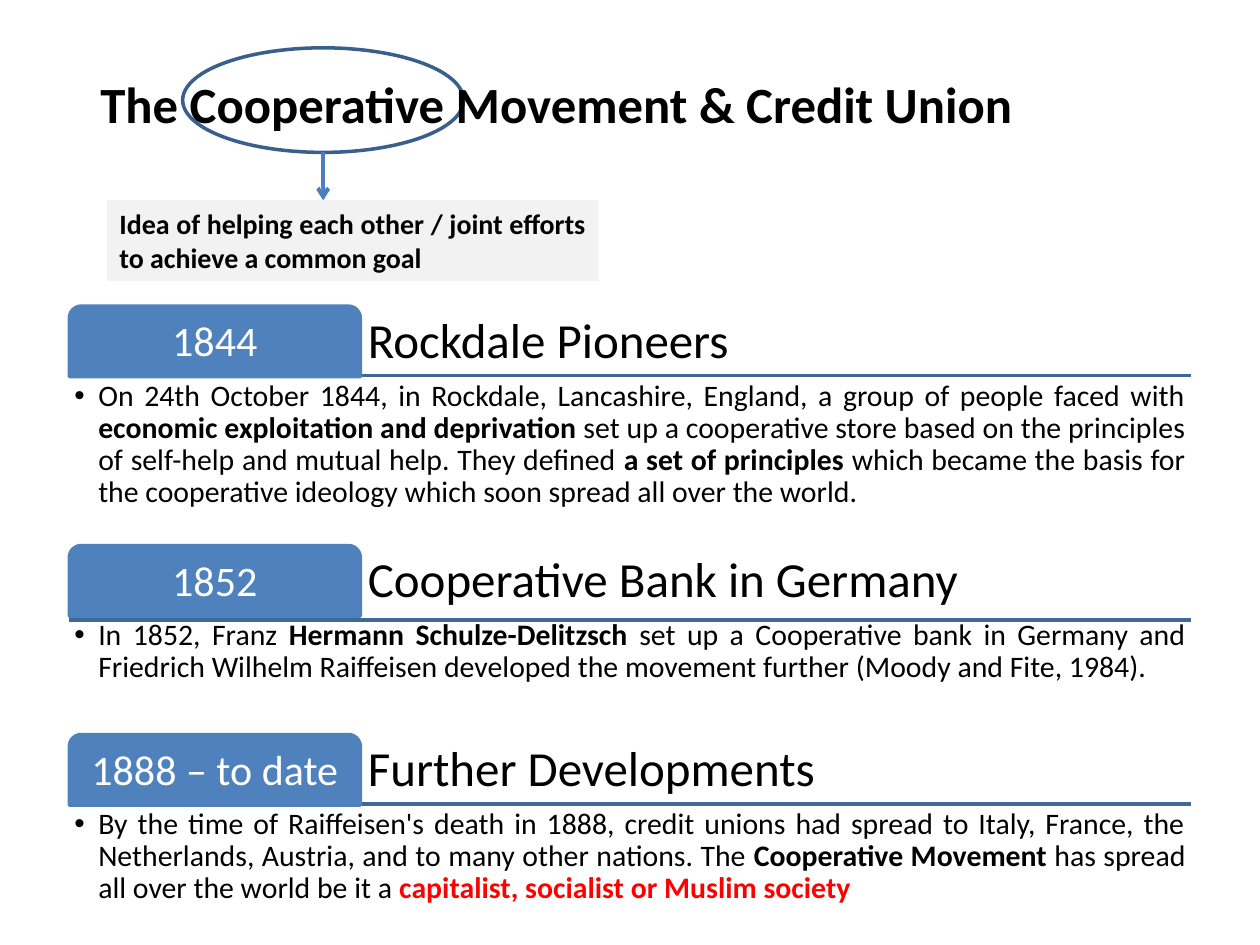
from lxml import etree
from pptx import Presentation
from pptx.dml.color import RGBColor
from pptx.enum.shapes import MSO_CONNECTOR as Connector, MSO_SHAPE as Shape
from pptx.enum.text import MSO_ANCHOR as Anchor, PP_ALIGN as Align
from pptx.oxml.ns import qn
from pptx.util import Inches, Pt

BLUE, RULE, BLACK, WHITE, RED = "4F81BD", "3F6797", "000000", "FFFFFF", "FF0000"

SECTIONS = [
    (2.43, 2.98, "1844", "Rockdale Pioneers", [
        ("On 24th October 1844, in Rockdale, Lancashire, England, a group of people faced with ", False, BLACK),
        ("economic exploitation and deprivation ", True, BLACK),
        ("set up a cooperative store based on the principles of self-help and mutual help. They defined ", False, BLACK),
        ("a set of principles ", True, BLACK),
        ("which became the basis for the cooperative ideology which soon spread all over the world.", False, BLACK)]),
    (4.33, 4.92, "1852", "Cooperative Bank in Germany", [
        ("In 1852, Franz ", False, BLACK),
        ("Hermann Schulze-Delitzsch ", True, BLACK),
        ("set up a Cooperative bank in Germany and Friedrich Wilhelm Raiffeisen developed "
         "the movement further (Moody and Fite, 1984). ", False, BLACK)]),
    (5.83, 6.38, "1888 – to date", "Further Developments", [
        ("By the time of Raiffeisen's death in 1888, credit unions had spread to Italy, France, "
         "the Netherlands, Austria, and to many other nations. The ", False, BLACK),
        ("Cooperative Movement ", True, BLACK),
        ("has spread all over the world be it a ", False, BLACK),
        ("capitalist, socialist or Muslim society ", True, RED)]),
]


def color(value):
    """Turn a hex string into a colour."""
    return RGBColor.from_string(value)


def add_block(page, kind, box, fill, line=None):
    """Add a flat preset shape."""
    block = page.shapes.add_shape(kind, *map(Inches, box))
    block.shadow.inherit = False
    block.fill.solid()
    block.fill.fore_color.rgb = color(fill)
    if line:
        block.line.color.rgb = color(line)
        block.line.width = Pt(2)
    else:
        block.line.fill.background()
    return block


def add_line(page, start, end, line, width):
    """Add a straight connector without a shadow."""
    rule = page.shapes.add_connector(Connector.STRAIGHT, *map(Inches, start + end))
    rule.line.color.rgb = color(line)
    rule.line.width = Pt(width)
    etree.SubElement(rule._element.spPr, qn("a:effectLst"))
    return rule


def add_text_box(page, box):
    """Add an empty text box."""
    return page.shapes.add_textbox(*map(Inches, box))


def write(shape, spans, size, align, anchor, inset=None, spacing=None):
    """Fill a shape with one paragraph of styled spans and return it."""
    frame = shape.text_frame
    frame.word_wrap = True
    frame.vertical_anchor = anchor
    if inset is not None:
        frame.margin_left = frame.margin_right = Inches(inset)
        frame.margin_top = frame.margin_bottom = Inches(inset)
    para = frame.paragraphs[0]
    para.alignment = align
    if spacing:
        para.line_spacing = spacing
    for text, bold, ink in spans:
        span = para.add_run()
        span.text = text
        span.font.name = "Calibri"
        span.font.size = Pt(size)
        span.font.bold = bold
        span.font.color.rgb = color(ink)
    return para


def add_bullet(para, indent):
    """Give a paragraph a hanging round bullet."""
    props = para._p.get_or_add_pPr()
    props.set("marL", str(Inches(indent)))
    props.set("indent", str(-Inches(indent)))
    etree.SubElement(props, qn("a:buFont")).set("typeface", "Arial")
    etree.SubElement(props, qn("a:buChar")).set("char", "•")


def add_header(page, left, top):
    """Add the title, the ringed word and the note it points to."""
    ring_left, ring_top, ring_width, ring_height = left + 1.28, top + 0.16, 2.23, 0.83
    middle, bottom, note_top = ring_left + ring_width / 2, ring_top + ring_height, top + 1.37
    add_block(page, Shape.OVAL, (ring_left, ring_top, ring_width, ring_height), WHITE, "3A5F8C")
    title = add_text_box(page, (left, top, 8.5, 1.2))
    write(title, [("The Cooperative Movement & Credit Union", True, BLACK)], 29, Align.CENTER, Anchor.MIDDLE)
    arrow = add_line(page, (middle, bottom), (middle, note_top), "4B7EBC", 2.25)
    etree.SubElement(arrow.line._get_or_add_ln(), qn("a:tailEnd")).set("type", "arrow")
    note = add_block(page, Shape.RECTANGLE, (left + 0.68, note_top, 3.9, 0.64), "F2F2F2")
    write(note, [("Idea of helping each other / joint efforts to achieve a common goal", True, BLACK)],
          16, Align.JUSTIFY, Anchor.TOP)


def add_section(page, left, top, width, rule_top, year, heading, spans):
    """Add a dated tab with its heading, rule and bullet text."""
    tab_width, tab_height = 2.31, 0.56
    add_line(page, (left, rule_top), (left + width, rule_top), RULE, 2)
    box = add_text_box(page, (left + tab_width, top, width - tab_width, tab_height))
    write(box, [(heading, False, BLACK)], 28, Align.LEFT, Anchor.BOTTOM, 0.06, 0.9)
    tab = add_block(page, Shape.ROUND_2_SAME_RECTANGLE, (left, top, tab_width, tab_height), BLUE, BLUE)
    tab.adjustments[0] = 0.17
    write(tab, [(year, False, WHITE)], 24, Align.CENTER, Anchor.MIDDLE, 0.05, 0.9)
    body = add_text_box(page, (left, top + 0.55, width, 1.12))
    add_bullet(write(body, spans, 17, Align.JUSTIFY, Anchor.TOP, 0.04, 0.9), 0.19)


def main():
    """Build and save the slide."""
    deck = Presentation()
    deck.slide_width, deck.slide_height = Inches(10), Inches(7.5)
    page = deck.slides.add_slide(deck.slide_layouts[6])
    add_header(page, 0.17, 0.22)
    for top, rule_top, year, heading, spans in SECTIONS:
        add_section(page, 0.55, top, 8.9, rule_top, year, heading, spans)
    deck.save("out.pptx")


if __name__ == "__main__":
    main()
